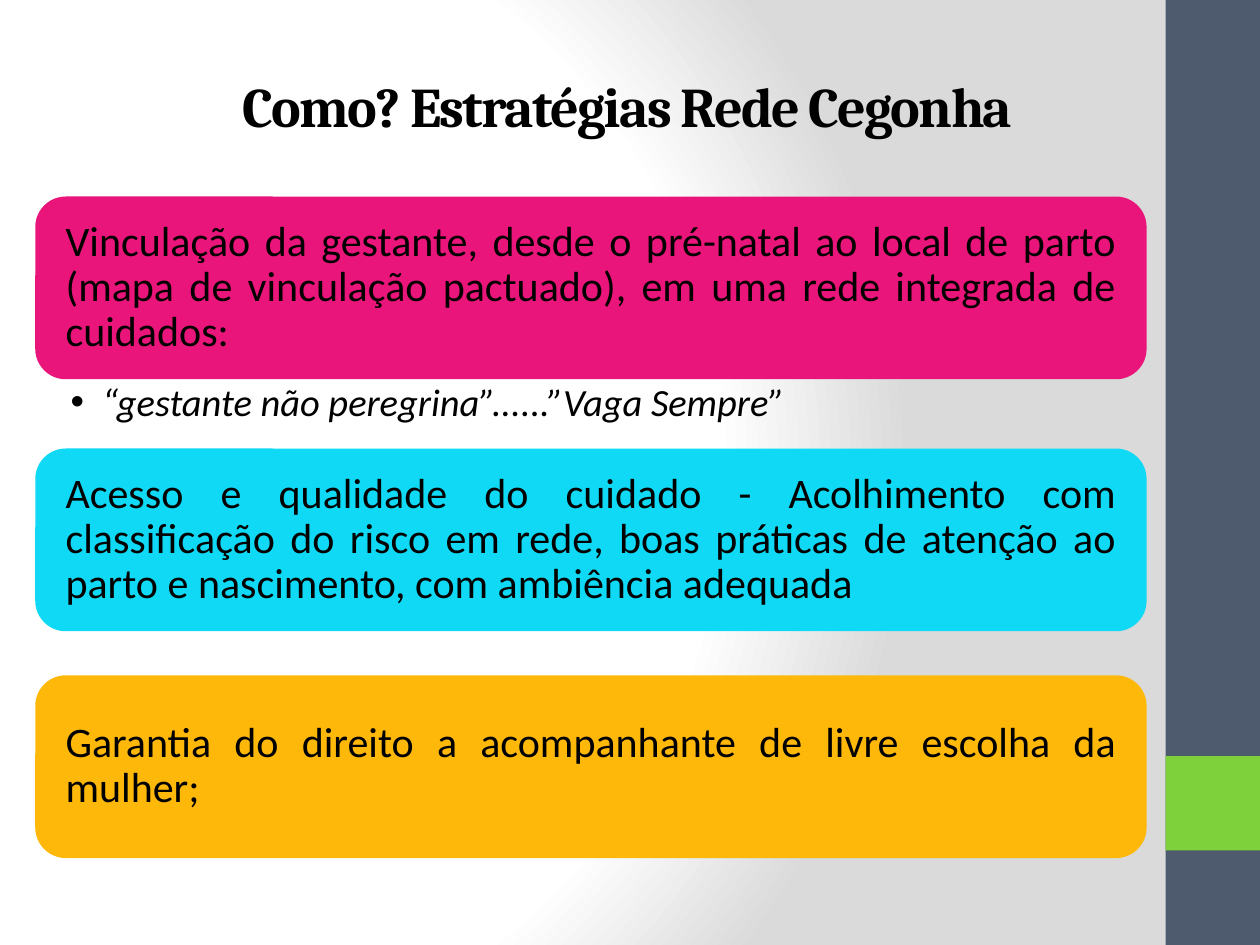
from pptx import Presentation
from pptx.dml.color import RGBColor
from pptx.enum.shapes import MSO_SHAPE as Preset
from pptx.enum.text import MSO_ANCHOR as Anchor, MSO_AUTO_SIZE as AutoSize, PP_ALIGN as Align
from pptx.oxml import parse_xml
from pptx.oxml.ns import nsdecls
from pptx.util import Inches, Pt

BLACK = "000000"
LEFT, WIDTH, HEIGHT = 0.28, 8.82, 1.45
BAND_LEFT, BAND_WIDTH = 9.25, 0.75

# top, fill, text of each strategy
STRATEGIES = [
    (1.56, "EA157A", "Vinculação da gestante, desde o pré-natal ao local de parto "
                     "(mapa de vinculação pactuado), em uma rede integrada de cuidados:"),
    (3.56, "0FD9F4", "Acesso e qualidade do cuidado - Acolhimento com classificação do "
                     "risco em rede, boas práticas de atenção ao parto e nascimento, "
                     "com ambiência adequada"),
    (5.36, "FEB80A", "Garantia do direito a acompanhante de livre escolha da mulher;"),
]
MOTTO = "“gestante não peregrina”......”Vaga Sempre”"


def color(value):
    return RGBColor.from_string(value)


def place(shape, left, top, width, height):
    shape.left, shape.top = Inches(left), Inches(top)
    shape.width, shape.height = Inches(width), Inches(height)


def paint_background(slide):
    """Radial gradient from white to light grey."""
    stops = "".join(f'<a:gs pos="{share * 1000}"><a:srgbClr val="{value}"/></a:gs>'
                    for share, value in [(0, "FFFFFF"), (75, "FFFFFF"), (100, "DADADA")])
    slide.element.cSld.insert(0, parse_xml(
        f'<p:bg {nsdecls("p", "a")}><p:bgPr><a:gradFill rotWithShape="1">'
        f'<a:gsLst>{stops}</a:gsLst><a:path path="circle">'
        '<a:fillToRect l="20000" t="50000" r="100000" b="50000"/></a:path>'
        '</a:gradFill><a:effectLst/></p:bgPr></p:bg>'))


def add_block(slide, preset, box, fill):
    block = slide.shapes.add_shape(preset, *map(Inches, box))
    block.shadow.inherit = False
    block.fill.solid()
    block.fill.fore_color.rgb = color(fill)
    block.line.fill.background()
    return block


def set_text(shape, text, size, font="Calibri", align=Align.JUSTIFY,
             anchor=Anchor.MIDDLE, insets=(0.1, 0.05, 0.1, 0.05), spacing=0.9):
    frame = shape.text_frame
    frame.text = text
    frame.word_wrap = True
    frame.auto_size = AutoSize.NONE
    frame.vertical_anchor = anchor
    (frame.margin_left, frame.margin_top,
     frame.margin_right, frame.margin_bottom) = map(Inches, insets)
    paragraph = frame.paragraphs[0]
    paragraph.alignment = align
    paragraph.line_spacing = spacing
    paragraph.space_before = Pt(0)
    run = paragraph.runs[0]
    run.font.name, run.font.size = font, Pt(size)
    run.font.color.rgb = color(BLACK)
    return paragraph, run


def add_title(slide, text):
    title = slide.shapes.title
    place(title, 0.12, 0.21, 9.72, 1.25)
    _, run = set_text(title, text, 32, "Cambria", Align.CENTER, spacing=1.0)
    run.font.bold = True
    run.font._element.set("spc", "-100")


def add_motto(slide, text):
    motto = slide.placeholders[1]
    place(motto, LEFT, 3.01, WIDTH, 0.55)
    paragraph, run = set_text(motto, text, 22, anchor=Anchor.TOP,
                              insets=(0.28, 0.03, 0.17, 0.03))
    run.font.italic = True
    # Bullet with a hanging indent
    properties = paragraph._p.get_or_add_pPr()
    properties.set("marL", str(Inches(0.25)))
    properties.set("indent", str(-Inches(0.25)))
    properties.append(parse_xml(f'<a:buChar {nsdecls("a")} char="•"/>'))


def main():
    deck = Presentation()
    deck.slide_width, deck.slide_height = Inches(10), Inches(7.5)
    slide = deck.slides.add_slide(deck.slide_layouts[1])
    paint_background(slide)

    # Side band with its accent
    add_block(slide, Preset.RECTANGLE, (BAND_LEFT, 0, BAND_WIDTH, 7.5), "4E5B6F")
    add_block(slide, Preset.RECTANGLE, (BAND_LEFT, 6, BAND_WIDTH, 0.75), "7FD13B")

    add_title(slide, "Como? Estratégias Rede Cegonha")

    # Strategies and the motto below the first one
    for top, fill, text in STRATEGIES:
        strategy = add_block(slide, Preset.ROUNDED_RECTANGLE, (LEFT, top, WIDTH, HEIGHT), fill)
        set_text(strategy, text, 24, insets=(0.17, 0.1, 0.17, 0.1))
    add_motto(slide, MOTTO)

    deck.save("out.pptx")


if __name__ == "__main__":
    main()
